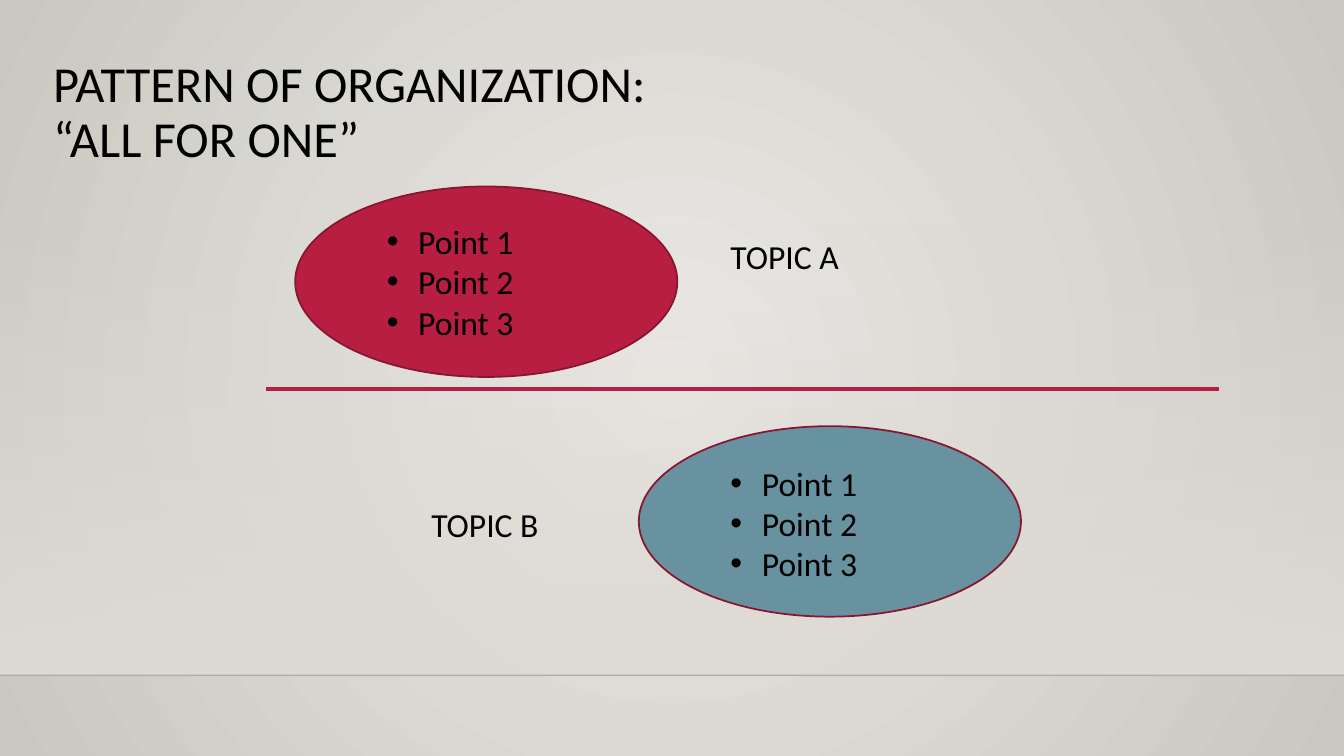
from dataclasses import dataclass

from lxml import etree
from pptx import Presentation
from pptx.dml.color import RGBColor
from pptx.enum.shapes import MSO_CONNECTOR, MSO_SHAPE
from pptx.enum.text import MSO_ANCHOR, MSO_AUTO_SIZE
from pptx.oxml.ns import qn
from pptx.shapes.autoshape import Shape
from pptx.slide import Slide
from pptx.text.text import TextFrame
from pptx.util import Cm, Pt

RECTANGLE, OVAL = MSO_SHAPE.RECTANGLE, MSO_SHAPE.OVAL
STRAIGHT = MSO_CONNECTOR.STRAIGHT
TOP, BOTTOM = MSO_ANCHOR.TOP, MSO_ANCHOR.BOTTOM
GROW, FIXED = MSO_AUTO_SIZE.SHAPE_TO_FIT_TEXT, MSO_AUTO_SIZE.NONE

BLACK = RGBColor(0x00, 0x00, 0x00)
SHELF_EDGE = RGBColor(0x00, 0x00, 0x01)
CRIMSON = RGBColor(0xB7, 0x1E, 0x42)
DARK_CRIMSON = RGBColor(0x87, 0x16, 0x31)
TEAL = RGBColor(0x68, 0x92, 0xA0)
WALL_CENTER = RGBColor(0xEC, 0xEA, 0xE7)
WALL_EDGE = RGBColor(0xCA, 0xC7, 0xC1)
HAZE = RGBColor(0xDF, 0xDB, 0xD5)

SLIDE_WIDTH, SLIDE_HEIGHT = 33.87, 19.05
SHELF_Y = 17.02
OVAL_WIDTH, OVAL_HEIGHT = 9.63, 4.8
LABEL_WIDTH, LABEL_HEIGHT = 5.49, 1.27
POINTS_HEIGHT = 3.33
BULLET_INDENT = Cm(0.79)
POINTS = ["Point 1", "Point 2", "Point 3"]


@dataclass(frozen=True)
class Topic:
    name: str
    name_at: tuple[float, float]
    oval_at: tuple[float, float]
    points_at: tuple[float, float]
    color: RGBColor


@dataclass(frozen=True)
class Rule:
    left: float
    right: float
    y: float
    color: RGBColor
    weight: float
    opacity: int = 100


TOPICS = [
    Topic("TOPIC A", (18.16, 5.82), (7.44, 4.7), (9.5, 5.44), CRIMSON),
    Topic("TOPIC B", (10.62, 12.57), (16.1, 10.74), (18.16, 11.53), TEAL),
]
RULES = [
    Rule(0, SLIDE_WIDTH, SHELF_Y, SHELF_EDGE, 1, opacity=20),
    Rule(6.71, 30.71, 9.8, CRIMSON, 2.5),
]


def set_opacity(color_element: etree._Element, percent: int) -> None:
    etree.SubElement(color_element, qn("a:alpha"), val=str(percent * 1000))


def paint_background(slide: Slide) -> None:
    """Fill the background with a gradient spreading from the center."""
    fill = slide.background.fill
    fill.gradient()
    for stop, color in zip(fill.gradient_stops, (WALL_CENTER, WALL_EDGE)):
        stop.color.rgb = color
    gradient = slide._element.find(".//" + qn("a:gradFill"))
    gradient.remove(gradient.find(qn("a:lin")))
    circle = etree.SubElement(gradient, qn("a:path"), path="circle")
    sides = dict.fromkeys("ltrb", "50000")
    etree.SubElement(circle, qn("a:fillToRect"), **sides)


def add_haze(slide: Slide) -> None:
    """Add the band above the shelf that fades out upwards."""
    top = 5.61
    haze = slide.shapes.add_shape(
        RECTANGLE, Cm(0), Cm(top), Cm(SLIDE_WIDTH), Cm(SHELF_Y - top)
    )
    haze.shadow.inherit = False
    haze.line.fill.background()
    haze.fill.gradient()
    haze.fill.gradient_angle = 270
    for stop in haze.fill.gradient_stops:
        stop.color.rgb = HAZE
    set_opacity(haze._element.find(".//" + qn("a:srgbClr")), 0)


def add_rule(slide: Slide, rule: Rule) -> None:
    connector = slide.shapes.add_connector(
        STRAIGHT, Cm(rule.left), Cm(rule.y), Cm(rule.right), Cm(rule.y)
    )
    connector.line.color.rgb = rule.color
    connector.line.width = Pt(rule.weight)
    properties = connector._element.spPr
    if rule.opacity < 100:
        set_opacity(properties.find(".//" + qn("a:srgbClr")), rule.opacity)
    etree.SubElement(properties, qn("a:effectLst"))


def add_oval(slide: Slide, topic: Topic) -> None:
    left, top = topic.oval_at
    oval: Shape = slide.shapes.add_shape(
        OVAL, Cm(left), Cm(top), Cm(OVAL_WIDTH), Cm(OVAL_HEIGHT)
    )
    oval.shadow.inherit = False
    oval.fill.solid()
    oval.fill.fore_color.rgb = topic.color
    oval.line.color.rgb = DARK_CRIMSON
    oval.line.width = Pt(1.25)


def add_text(
    slide: Slide,
    lines: list[str],
    at: tuple[float, float],
    size: tuple[float, float],
    points: int = 24,
    bulleted: bool = False,
) -> TextFrame:
    """Add a text box with one paragraph per line; "\v" breaks a line."""
    box = slide.shapes.add_textbox(*map(Cm, at + size))
    frame = box.text_frame
    frame_format = {"word_wrap": True, "auto_size": GROW, "vertical_anchor": TOP}
    for name, value in frame_format.items():
        setattr(frame, name, value)
    frame.text = "\n".join(lines)
    font_format = {"name": "Calibri", "size": Pt(points)}
    for paragraph in frame.paragraphs:
        if bulleted:
            properties = paragraph._p.get_or_add_pPr()
            properties.set("marL", str(BULLET_INDENT))
            properties.set("indent", str(-BULLET_INDENT))
            etree.SubElement(properties, qn("a:buFont"), typeface="Arial")
            etree.SubElement(properties, qn("a:buChar"), char="•")
        for run in paragraph.runs:
            for name, value in font_format.items():
                setattr(run.font, name, value)
            run.font.color.rgb = BLACK
    return frame


def add_title(slide: Slide) -> None:
    title = "PATTERN OF ORGANIZATION:\v“ALL FOR ONE”"
    frame = add_text(slide, [title], (1.09, -2.82), (24, 7.06), points=36)
    title_format = {"auto_size": FIXED, "vertical_anchor": BOTTOM, "margin_bottom": 0}
    for name, value in title_format.items():
        setattr(frame, name, value)
    frame.paragraphs[0].line_spacing = 0.9


def main() -> None:
    presentation = Presentation()
    presentation.slide_width = Cm(SLIDE_WIDTH)
    presentation.slide_height = Cm(SLIDE_HEIGHT)
    slide = presentation.slides.add_slide(presentation.slide_layouts[6])

    paint_background(slide)
    add_haze(slide)
    for rule in RULES:
        add_rule(slide, rule)
    add_title(slide)
    for topic in TOPICS:
        add_oval(slide, topic)
        add_text(
            slide, POINTS, topic.points_at, (LABEL_WIDTH, POINTS_HEIGHT), bulleted=True
        )
        add_text(slide, [topic.name], topic.name_at, (LABEL_WIDTH, LABEL_HEIGHT))

    presentation.save("out.pptx")


if __name__ == "__main__":
    main()
